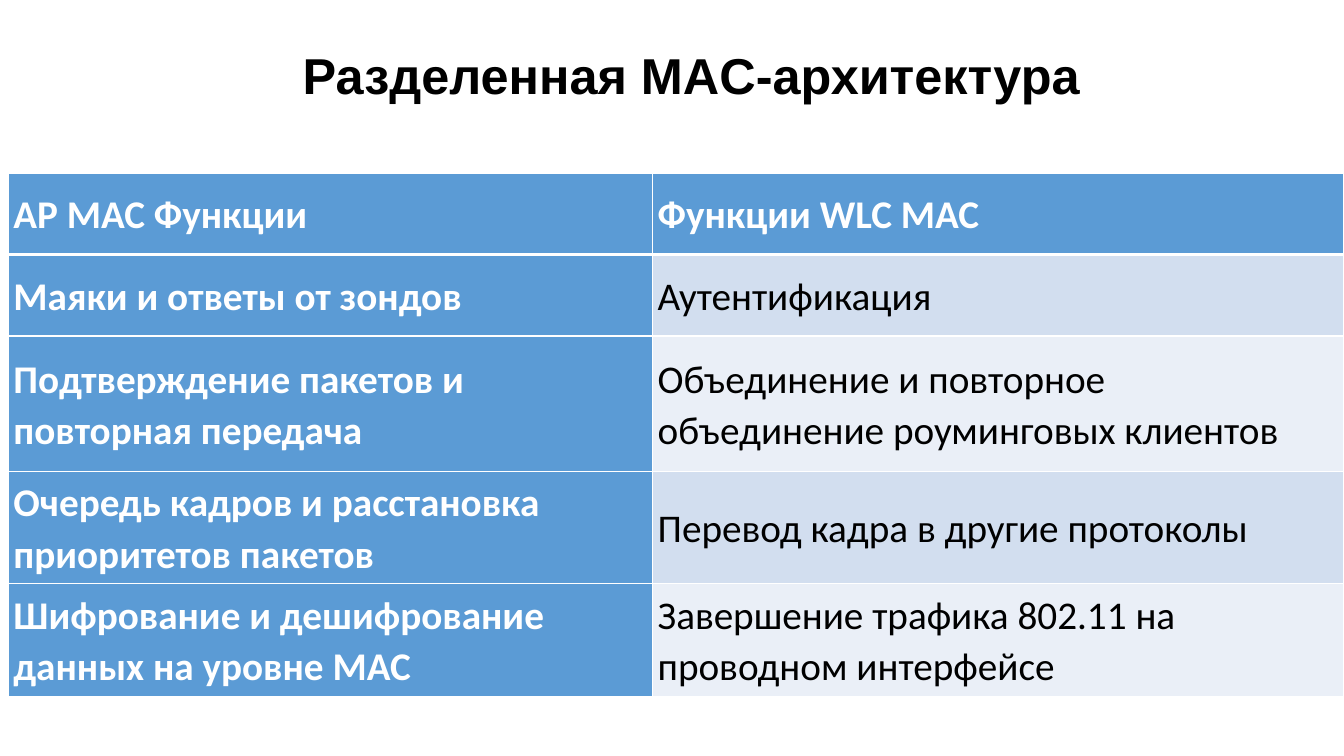
from lxml import etree
from pptx import Presentation, util as u
from pptx.dml.color import RGBColor
from pptx.enum import text
from pptx.oxml import ns

WHITE = RGBColor(0xFF, 0xFF, 0xFF)
BLACK = RGBColor(0, 0, 0)
BLUE = RGBColor(0x5B, 0x9B, 0xD5)
BANDS = (RGBColor(0xD2, 0xDE, 0xEF), RGBColor(0xEA, 0xEF, 0xF7))

SLIDE_WIDTH, SLIDE_HEIGHT = u.Inches(13.33), u.Inches(7.5)
GRID_COLUMNS, GRID_ROWS = 160, 90

TITLE = "Разделенная MAC-архитектура"
FUNCTIONS = (
    ("AP MAC Функции", "Функции WLC MAC"),
    ("Маяки и ответы от зондов", "Аутентификация"),
    ("Подтверждение пакетов и повторная передача",
     "Объединение и повторное объединение роуминговых клиентов"),
    ("Очередь кадров и расстановка приоритетов пакетов",
     "Перевод кадра в другие протоколы"),
    ("Шифрование и дешифрование данных на уровне MAC",
     "Завершение трафика 802.11 на проводном интерфейсе"),
)
COLUMN_WIDTHS = (76.7, 82.3)
ROW_HEIGHTS = (9.7, 9.7, 16.1, 9.7, 9.7)


def across(columns):
    return u.Emu(round(SLIDE_WIDTH * columns / GRID_COLUMNS))


def down(rows):
    return u.Emu(round(SLIDE_HEIGHT * rows / GRID_ROWS))


def format_run(paragraph, font_name, size, color, bold):
    font = paragraph.runs[0].font
    font.name, font.size, font.bold = font_name, u.Pt(size), bold
    font.color.rgb = color


def add_title(slide):
    box = slide.shapes.add_textbox(across(34.4), down(4.7), across(95.8), down(8.5))
    frame = box.text_frame
    frame.word_wrap = False
    frame.auto_size = text.MSO_AUTO_SIZE.SHAPE_TO_FIT_TEXT
    frame.text = TITLE
    paragraph = frame.paragraphs[0]
    paragraph.alignment = text.PP_ALIGN.CENTER
    format_run(paragraph, "Arial", 36, BLACK, True)


def set_borders(cell, top, bottom):
    properties = cell._tc.get_or_add_tcPr()
    for side, width in (("L", 1), ("R", 1), ("T", top), ("B", bottom)):
        line = etree.SubElement(properties, ns.qn(f"a:ln{side}"), w=str(u.Pt(width)))
        fill = etree.SubElement(line, ns.qn("a:solidFill"))
        etree.SubElement(fill, ns.qn("a:srgbClr"), val=str(WHITE))


def fill_cell(cell, content, row, column):
    is_heading = row == 0 or column == 0
    set_borders(cell, 3 if row == 1 else 1, 3 if row == 0 else 1)
    cell.fill.solid()
    cell.fill.fore_color.rgb = BLUE if is_heading else BANDS[(row - 1) % 2]
    cell.margin_left = cell.margin_right = u.Inches(0.05)
    cell.margin_top = cell.margin_bottom = u.Inches(0.05)
    cell.vertical_anchor = text.MSO_ANCHOR.MIDDLE
    cell.text_frame.text = content
    paragraph = cell.text_frame.paragraphs[0]
    paragraph.line_spacing = 1.07
    paragraph.space_after = u.Pt(8)
    format_run(paragraph, "Calibri", 28, WHITE if is_heading else BLACK, is_heading)


def add_function_table(slide):
    frame = slide.shapes.add_table(
        len(FUNCTIONS), len(COLUMN_WIDTHS), across(1), down(20.6),
        across(sum(COLUMN_WIDTHS)), down(sum(ROW_HEIGHTS)))
    table = frame.table
    table.first_col = True
    for column, width in zip(table.columns, COLUMN_WIDTHS):
        column.width = across(width)
    for row, height in zip(table.rows, ROW_HEIGHTS):
        row.height = down(height)
    for row, contents in enumerate(FUNCTIONS):
        for column, content in enumerate(contents):
            fill_cell(table.cell(row, column), content, row, column)


def main():
    presentation = Presentation()
    presentation.slide_width = SLIDE_WIDTH
    presentation.slide_height = SLIDE_HEIGHT
    slide = presentation.slides.add_slide(presentation.slide_layouts[6])
    add_function_table(slide)
    add_title(slide)
    presentation.save("out.pptx")


if __name__ == "__main__":
    main()
